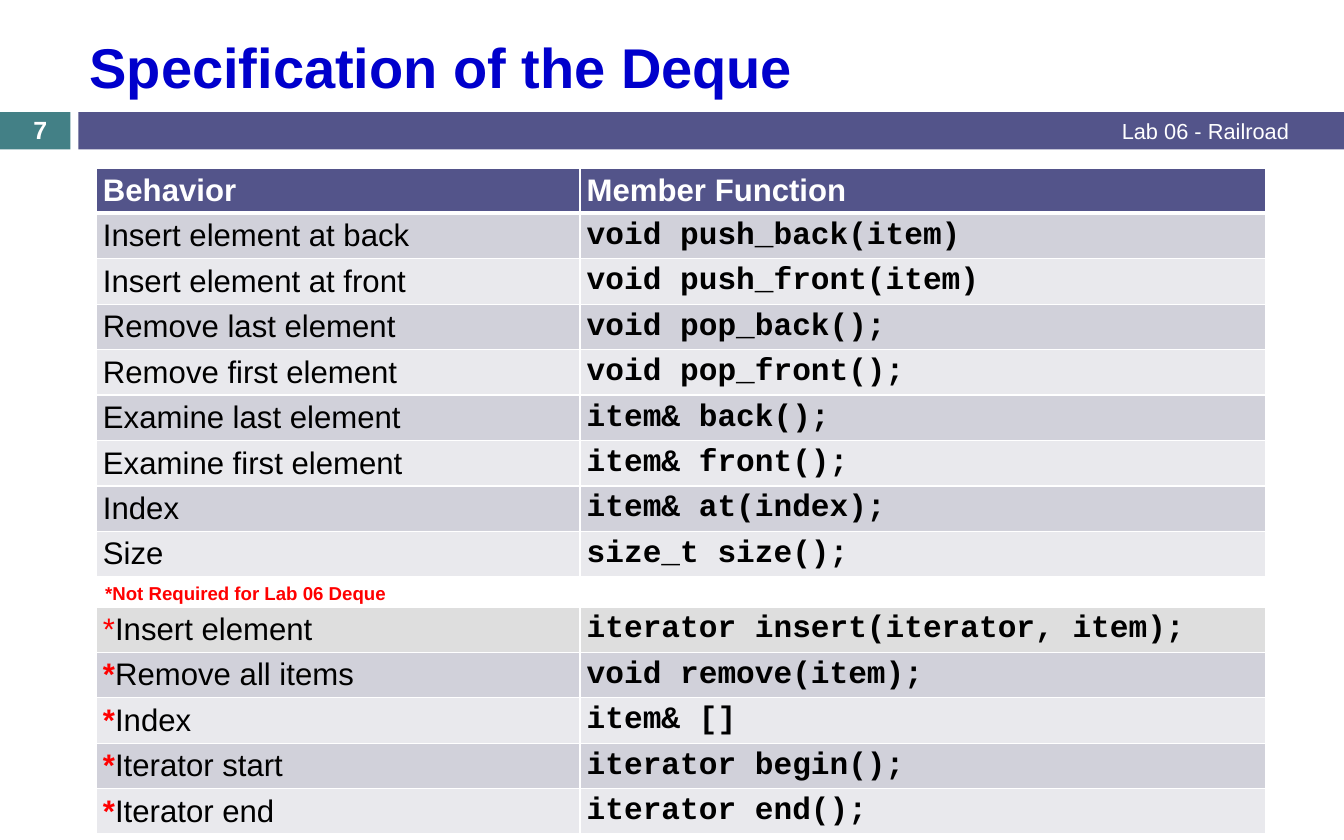
from lxml import etree
from pptx import Presentation
from pptx.dml.color import RGBColor
from pptx.enum.shapes import MSO_SHAPE
from pptx.enum.text import MSO_ANCHOR, PP_ALIGN
from pptx.oxml.ns import qn
from pptx.util import Pt

RECT = MSO_SHAPE.RECTANGLE
TOP, MID = MSO_ANCHOR.TOP, MSO_ANCHOR.MIDDLE
LEFT, MIDDLE, RIGHT = PP_ALIGN.LEFT, PP_ALIGN.CENTER, PP_ALIGN.RIGHT
WHITE = RGBColor(0xFF, 0xFF, 0xFF)
BLACK = RGBColor(0, 0, 0)
RED = RGBColor(0xFF, 0, 0)
BLUE = RGBColor(0, 0, 0xCC)
TEAL = RGBColor(0x43, 0x80, 0x86)
INDIGO = RGBColor(0x53, 0x54, 0x8A)
DARK = RGBColor(0xD1, 0xD1, 0xDA)
LIGHT = RGBColor(0xE9, 0xE9, 0xED)
GRAY = RGBColor(0xDE, 0xDE, 0xDE)
SANS, MONO = "Arial", "Courier New"

TITLE = "Specification of the Deque"
HEAD = ("Behavior", "Member Function")
MAIN = [
    ("Insert element at back", "void push_back(item)"),
    ("Insert element at front", "void push_front(item)"),
    ("Remove last element", "void pop_back();"),
    ("Remove first element", "void pop_front();"),
    ("Examine last element", "item& back();"),
    ("Examine first element", "item& front();"),
    ("Index", "item& at(index);"),
    ("Size", "size_t size();"),
]
EXTRA = [
    ("Insert element", "iterator insert(iterator, item);"),
    ("Remove all items", "void remove(item);"),
    ("Index", "item& []"),
    ("Iterator start", "iterator begin();"),
    ("Iterator end", "iterator end();"),
]
BARS = [(0, 45.36, TEAL), (50.4, 813.6, INDIGO)]
LABELS = [
    ("*Not Required for Lab 06 Deque", (60.5, 370.8, 368.6, 21.6), 12, RED, True, LEFT, TOP),
    ("Lab 06 - Railroad", (324, 71.3, 511.9, 25.2), 14, WHITE, False, RIGHT, MID),
    ("7", (0, 72.7, 51.8, 21.6), 16, WHITE, True, MIDDLE, MID),
]
COLS = (311, 440.6)
ROW = 29.2
EDGE = 61.9


def style(run, size, color, bold=False, face=SANS):
    font = run.font
    font.name, font.size, font.bold = face, Pt(size), bold
    font.color.rgb = color


def border(cell, top, base):
    props = cell._tc.get_or_add_tcPr()
    sides = (("lnL", 1), ("lnR", 1), ("lnT", top), ("lnB", base))
    for spot, (tag, width) in enumerate(sides):
        line = etree.Element(qn(f"a:{tag}"), w=str(Pt(width)))
        fill = etree.SubElement(line, qn("a:solidFill"))
        etree.SubElement(fill, qn("a:srgbClr"), val=str(WHITE))
        props.insert(spot, line)


def put_cell(cell, parts, fill, top, base):
    cell.margin_left = cell.margin_right = Pt(4.3)
    cell.margin_top = cell.margin_bottom = Pt(2.2)
    cell.vertical_anchor = MID
    cell.fill.solid()
    cell.fill.fore_color.rgb = fill
    border(cell, top, base)
    para = cell.text_frame.paragraphs[0]
    for text, *look in parts:
        run = para.add_run()
        run.text = text
        style(run, 20, *look)


def put_table(slide, top, first, rows, rule):
    high = ROW * len(rows)
    frame = slide.shapes.add_table(
        len(rows), len(COLS), Pt(EDGE), Pt(top), Pt(sum(COLS)), Pt(high))
    table = frame.table
    table.first_row = first == INDIGO
    for col, width in zip(table.columns, COLS):
        col.width = Pt(width)
    for i, row in enumerate(rows):
        table.rows[i].height = Pt(ROW)
        fill = first if i == 0 else (LIGHT, DARK)[i % 2]
        over = rule if i == 1 else 1
        under = rule if i == 0 else 1
        for j, parts in enumerate(row):
            put_cell(table.cell(i, j), parts, fill, over, under)


def code(text):
    return [(text, BLACK, True, MONO)]


deck = Presentation()
deck.slide_width, deck.slide_height = Pt(864), Pt(540)
slide = deck.slides.add_slide(deck.slide_layouts[5])

title = slide.shapes.title
title.left, title.top, title.width, title.height = Pt(50.4), Pt(13.7), Pt(785.5), Pt(57.6)
title.text_frame.text = TITLE
title.text_frame.vertical_anchor = MID
title.text_frame.paragraphs[0].alignment = LEFT
style(title.text_frame.paragraphs[0].runs[0], 36, BLUE, True)

for left, width, color in BARS:
    bar = slide.shapes.add_shape(RECT, Pt(left), Pt(72), Pt(width), Pt(24))
    bar.shadow.inherit = False
    bar.fill.solid()
    bar.fill.fore_color.rgb = color
    bar.line.fill.background()

for text, area, size, color, bold, align, anchor in LABELS:
    box = slide.shapes.add_textbox(*map(Pt, area))
    frame = box.text_frame
    frame.word_wrap = True
    frame.vertical_anchor = anchor
    frame.text = text
    frame.paragraphs[0].alignment = align
    style(frame.paragraphs[0].runs[0], size, color, bold)

head = [[(text, WHITE, True)] for text in HEAD]
main = [([(name, BLACK)], code(call)) for name, call in MAIN]
extra = [([("*", RED, i > 0), (name, BLACK)], code(call))
         for i, (name, call) in enumerate(EXTRA)]
put_table(slide, 108, INDIGO, [head] + main, 3)
put_table(slide, 390.2, GRAY, extra, 0.5)

deck.save("out.pptx")
